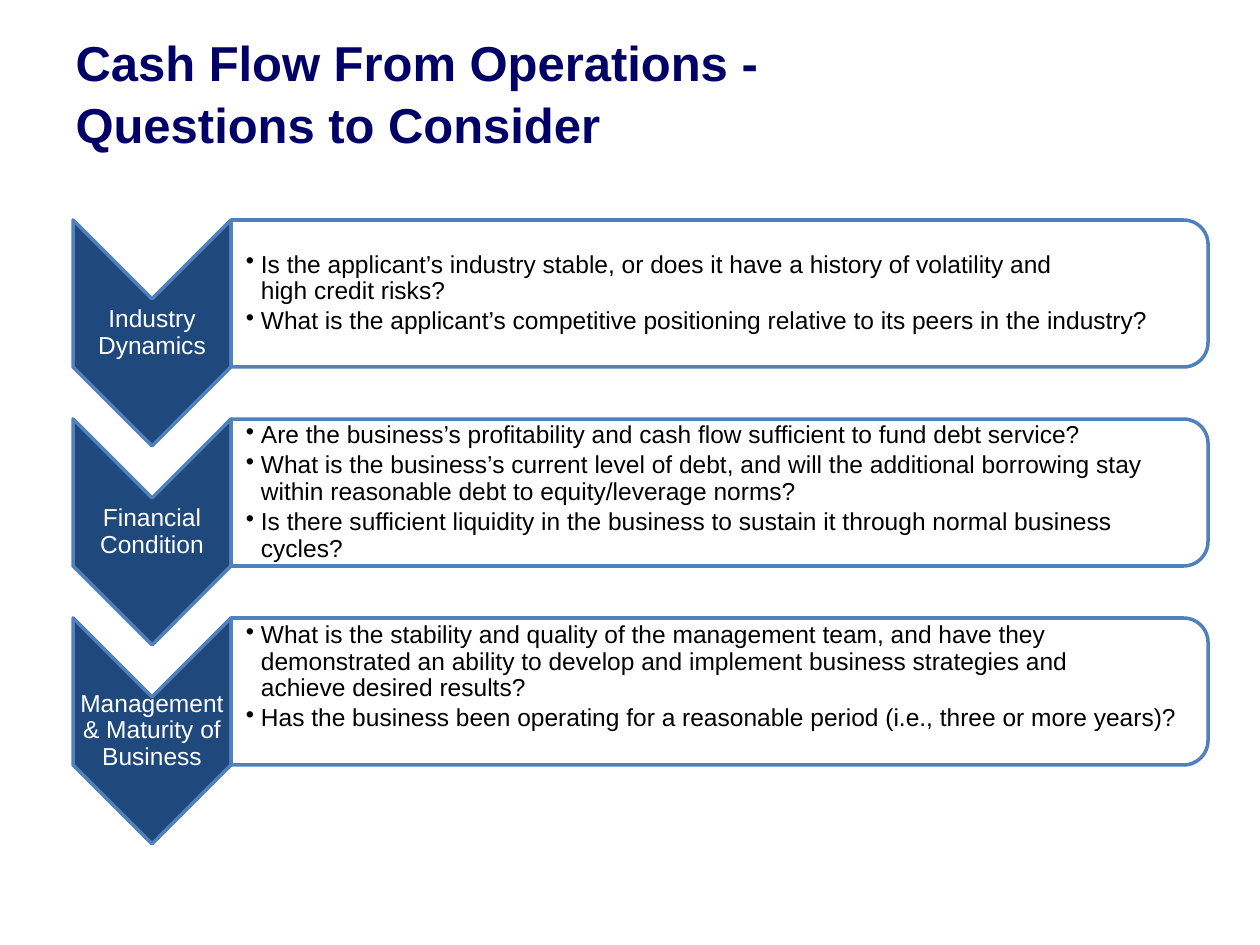
"""Build the slide on cash flow questions to consider."""
from lxml.etree import SubElement
from pptx import Presentation
from pptx.dml.color import RGBColor
from pptx.enum.shapes import MSO_SHAPE
from pptx.enum.text import MSO_ANCHOR, MSO_AUTO_SIZE, PP_ALIGN
from pptx.oxml.ns import qn
from pptx.util import Pt

TITLE = "Cash Flow From Operations - Questions to Consider"
ROWS = [
    ("Industry Dynamics", 1, [
        ["Is the applicant’s industry stable, or does it have a history of volatility and ",
         "high credit risks?"],
        ["What is the applicant’s competitive positioning relative to its peers in the industry?"],
    ]),
    ("Financial Condition", 1, [
        ["Are the business’s profitability and cash flow sufficient to fund debt service?"],
        ["What is the business’s current level of debt, and will the additional borrowing stay "
         "within reasonable debt to equity/leverage norms?"],
        ["Is there sufficient liquidity in the business to sustain it through normal business "
         "cycles?"],
    ]),
    ("Management & Maturity of Business", 29, [
        ["What is the stability and quality of the management team, and have they "
         "demonstrated an ability to develop and implement business strategies and ",
         "achieve desired results?"],
        ["Has the business been operating for a reasonable period (i.e., three or more years)?"],
    ]),
]
NAVY, BLUE, EDGE, WHITE, BLACK = "000066", "1F497D", "4F81BD", "FFFFFF", "000000"
LEFT, TOP, STEP = 73, 220, 199
ARROW_W, ARROW_H = 158, 226
PANEL_W, PANEL_H = 977, 147


def px(n):
    return round(n * 914400 / 126)


def tint(text):
    return RGBColor.from_string(text)


def turned(slide, kind, x, y, w, h, fill):
    """Add a shape turned by 90 degrees that covers the given box."""
    shape = slide.shapes.add_shape(
        kind, px(x + (w - h) / 2), px(y + (h - w) / 2), px(h), px(w))
    shape.rotation = 90
    shape.shadow.inherit = False
    shape.fill.solid()
    shape.fill.fore_color.rgb = tint(fill)
    shape.line.color.rgb = tint(EDGE)
    shape.line.width = Pt(2)
    return shape


def write(para, parts, size, color, bold=False):
    for i, part in enumerate(parts):
        if i:
            para.add_line_break()
        run = para.add_run()
        run.text = part
        font = run.font
        font.name, font.size, font.bold = "Arial", Pt(size), bold
        font.color.rgb = tint(color)


def text_box(slide, x, y, w, h, pads):
    frame = slide.shapes.add_textbox(px(x), px(y), px(w), px(h)).text_frame
    frame.word_wrap = True
    frame.vertical_anchor = MSO_ANCHOR.MIDDLE
    (frame.margin_left, frame.margin_top,
     frame.margin_right, frame.margin_bottom) = map(px, pads)
    return frame


def add_row(slide, y, label, pad, points):
    turned(slide, MSO_SHAPE.CHEVRON, LEFT, y, ARROW_W, ARROW_H, BLUE)
    para = text_box(slide, LEFT, y + 79, ARROW_W, 68, (1, 1, 1, 1)).paragraphs[0]
    para.alignment, para.line_spacing = PP_ALIGN.CENTER, 0.9
    write(para, [label], 14, WHITE)

    x = LEFT + ARROW_W
    panel = turned(slide, MSO_SHAPE.ROUND_2_SAME_RECTANGLE, x, y, PANEL_W, PANEL_H, WHITE)
    fill = panel.fill._xPr.find(qn("a:solidFill"))
    SubElement(fill[0], qn("a:alpha"), val="90000")
    frame = text_box(slide, x + 1, y + 7, PANEL_W - 8, PANEL_H - 14, (14, 1, 1, pad))
    for i, parts in enumerate(points):
        para = frame.add_paragraph() if i else frame.paragraphs[0]
        props = para._p.get_or_add_pPr()
        props.set("marL", str(px(15)))
        props.set("indent", str(-px(15)))
        SubElement(props, qn("a:buChar"), char="•")
        para.level, para.line_spacing, para.space_after = 1, 0.9, Pt(2.1)
        write(para, parts, 14, BLACK)


def main():
    deck = Presentation()
    deck.slide_width, deck.slide_height = px(1260), px(945)
    slide = deck.slides.add_slide(deck.slide_layouts[5])
    title = slide.shapes.title
    title.left, title.top, title.width, title.height = map(px, (63, 57, 798, 69))
    frame = title.text_frame
    frame.word_wrap, frame.auto_size = True, MSO_AUTO_SIZE.NONE
    frame.vertical_anchor = MSO_ANCHOR.MIDDLE
    para = frame.paragraphs[0]
    para.alignment, para.line_spacing = PP_ALIGN.LEFT, 1.05
    write(para, [TITLE], 28, NAVY, True)
    for i, row in enumerate(ROWS):
        add_row(slide, TOP + i * STEP, *row)
    deck.save("out.pptx")


if __name__ == "__main__":
    main()
